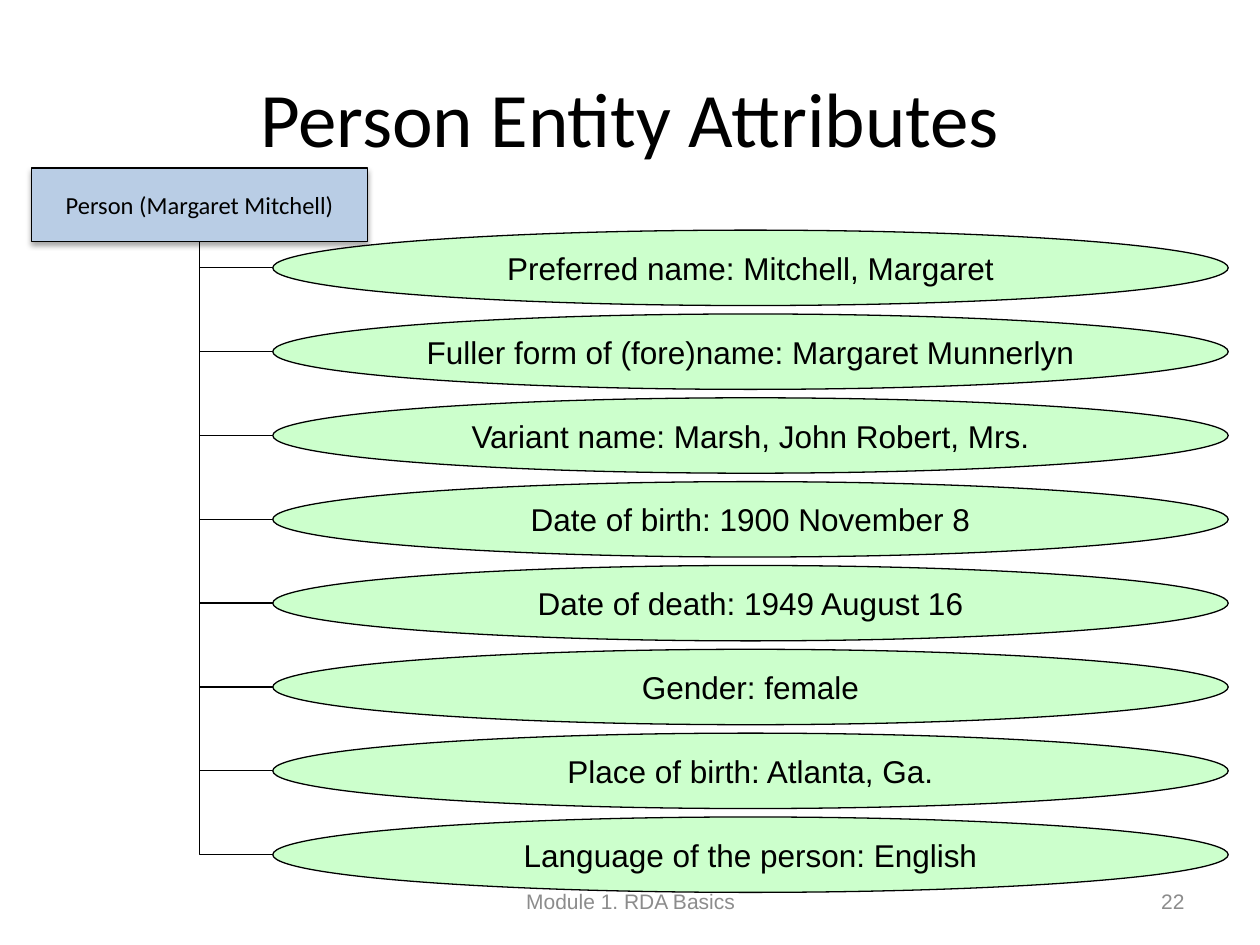
from lxml import etree
from pptx import Presentation
from pptx.dml.color import RGBColor
from pptx.enum import shapes, text
from pptx.oxml import parse_xml
from pptx.oxml.ns import nsdecls, qn
from pptx.util import Cm, Pt

COLORS = {"black": "000000", "blue": "B9CDE5", "green": "CCFFCC", "grey": "8C8C8C"}
ATTRIBUTES = [
    "Preferred name: Mitchell, Margaret",
    "Fuller form of (fore)name: Margaret Munnerlyn",
    "Variant name: Marsh, John Robert, Mrs.",
    "Date of birth: 1900 November 8",
    "Date of death: 1949 August 16",
    "Gender: female",
    "Place of birth: Atlanta, Ga.",
    "Language of the person: English",
]
FIRST_TOP, PITCH = 4.64, 1.69


def write(shape, wording, size, font="Arial", color="black", align=text.PP_ALIGN.CENTER):
    """Put one vertically centred paragraph in a shape."""
    frame = shape.text_frame
    frame.text = wording
    frame.word_wrap = True
    frame.vertical_anchor = text.MSO_ANCHOR.MIDDLE
    paragraph = frame.paragraphs[0]
    paragraph.alignment = align
    run_font = paragraph.runs[0].font
    run_font.size, run_font.name = Pt(size), font
    run_font.color.rgb = RGBColor.from_string(COLORS[color])


def add_node(kind, left, top, width, height, fill):
    """Add a filled shape with a thin black outline and no shadow."""
    shape = slide.shapes.add_shape(kind, Cm(left), Cm(top), Cm(width), Cm(height))
    shape.shadow.inherit = False
    shape.fill.solid()
    shape.fill.fore_color.rgb = RGBColor.from_string(COLORS[fill])
    shape.line.color.rgb = RGBColor.from_string(COLORS["black"])
    shape.line.width = Pt(0.75)
    return shape


presentation = Presentation()
presentation.slide_width, presentation.slide_height = Cm(25.4), Cm(19.05)
slide = presentation.slides.add_slide(presentation.slide_layouts[5])

title = slide.shapes.title
title.left, title.top, title.width, title.height = Cm(1.27), Cm(0.76), Cm(22.86), Cm(3.18)
write(title, "Person Entity Attributes", 44, "Calibri")

person = add_node(shapes.MSO_SHAPE.FLOWCHART_PROCESS, 0.64, 3.39, 6.77, 1.48, "blue")
write(person, "Person (Margaret Mitchell)", 14, "Calibri")
effects = person._element.spPr.find(qn("a:effectLst"))
effects.append(parse_xml(
    f'<a:outerShdw {nsdecls("a")} blurRad="40000" dist="23000" dir="5400000" rotWithShape="0">'
    f'<a:srgbClr val="{COLORS["black"]}"><a:alpha val="35000"/></a:srgbClr></a:outerShdw>'))

for row, attribute in enumerate(ATTRIBUTES):
    oval = add_node(shapes.MSO_SHAPE.OVAL, 5.5, FIRST_TOP + row * PITCH, 19.26, 1.52, "green")
    write(oval, attribute, 18)

    branch = slide.shapes.add_connector(shapes.MSO_CONNECTOR.ELBOW, 0, 0, 0, 0)
    branch.begin_connect(oval, 1)
    branch.end_connect(person, 2)
    branch.line.color.rgb = RGBColor.from_string(COLORS["black"])
    branch.line.width = Pt(0.75)
    # One bend only; the left point of an oval is its connection site 2
    properties = branch._element.spPr
    properties.find(qn("a:prstGeom")).set("prst", "bentConnector2")
    next(branch._element.iter(qn("a:stCxn"))).set("idx", "2")
    etree.SubElement(properties, qn("a:effectLst"))

for left, width, wording, align in [
    (8.69, 8.05, "Module 1. RDA Basics", text.PP_ALIGN.CENTER),
    (18.21, 5.92, "22", text.PP_ALIGN.RIGHT),
]:
    footer = slide.shapes.add_textbox(Cm(left), Cm(17.65), Cm(width), Cm(1.02))
    write(footer, wording, 12, color="grey", align=align)

presentation.save("out.pptx")
